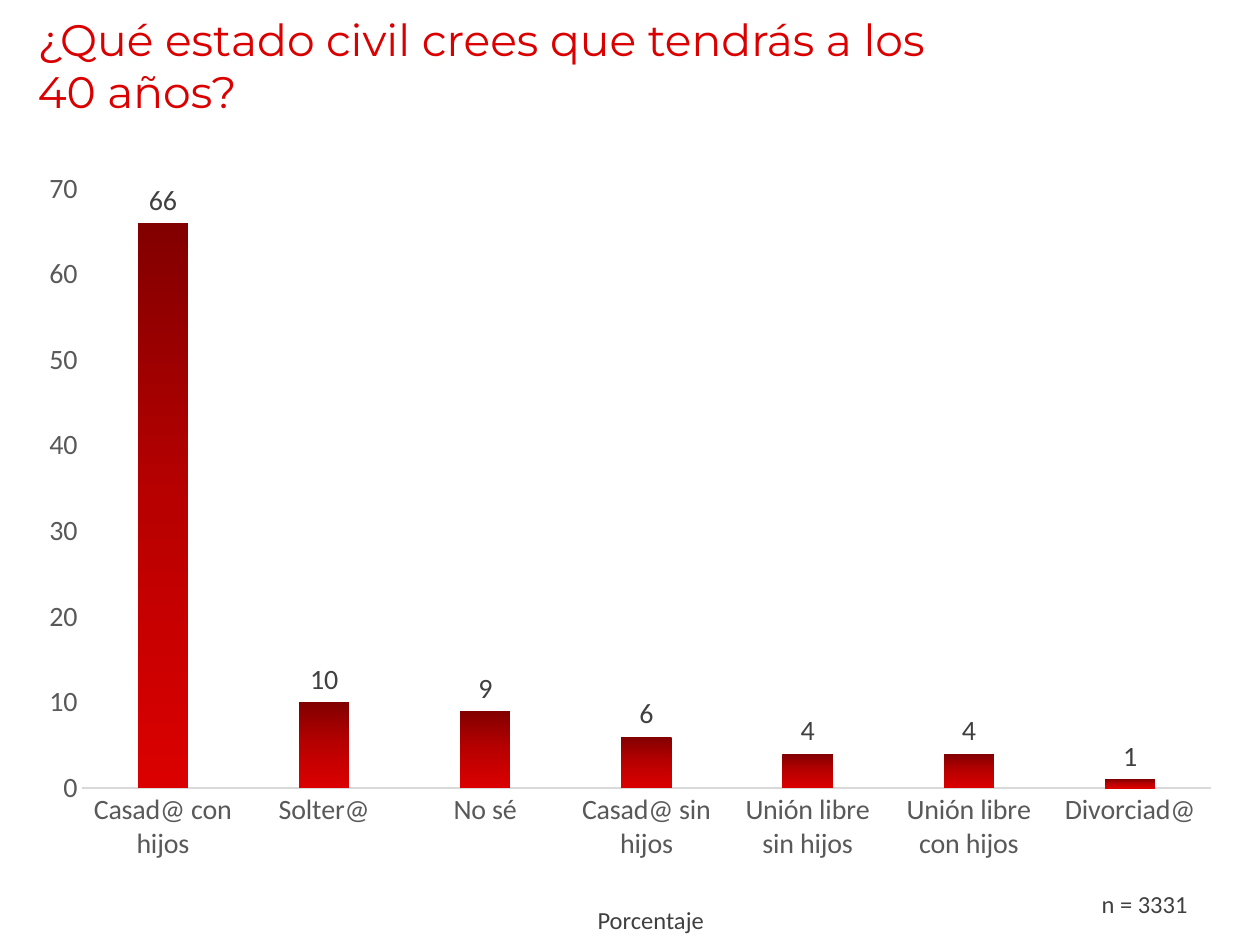
from copy import deepcopy
from dataclasses import dataclass

from pptx import Presentation
from pptx import util as u
from pptx.chart import data
from pptx.dml import color
from pptx.enum import chart as ch
from pptx.enum import text


@dataclass(frozen=True)
class Theme:
    red: str = "DB0000"
    ink: str = "404040"
    axis: str = "595959"
    rule: str = "D9D9D9"
    bar: tuple = ((0, "820000"), (0.5, "B90000"), (1, "DB0000"))
    head: str = "Montserrat"
    body: str = "Calibri"
    big: float = 25.2
    mid: float = 16
    small: float = 14


def rgb(tone):
    return color.RGBColor.from_string(tone)


class Deck:
    """Style and current slide; lengths are cells of a 100 x 75 grid."""

    def __init__(self, theme):
        self.theme = theme
        self.prs = Presentation()
        self.prs.slide_width, self.prs.slide_height = u.Inches(10), u.Inches(7.5)
        self.cell = self.prs.slide_width / 100
        self.slide = self.prs.slides.add_slide(self.prs.slide_layouts[6])

    def area(self, *cells):
        return [round(n * self.cell) for n in cells]

    def style(self, font, size, tone, face=None):
        font.name = face or self.theme.body
        font.size, font.bold = u.Pt(size), False
        font.color.rgb = rgb(tone)

    def label(self, words, at, size, tone, face=None, align=text.PP_ALIGN.CENTER):
        frame = self.slide.shapes.add_textbox(*self.area(*at)).text_frame
        frame.word_wrap = True
        frame.vertical_anchor = text.MSO_ANCHOR.MIDDLE
        frame.text = words
        par = frame.paragraphs[0]
        par.alignment = align
        self.style(par.runs[0].font, size, tone, face)

    def shade(self, fill, stops):
        fill.gradient()
        fill.gradient_angle = 270
        # Add stops beyond the default pair
        first = fill.gradient_stops[0]._gs
        for _ in stops[2:]:
            first.addnext(deepcopy(first))
        for stop, (pos, tone) in zip(fill.gradient_stops, stops):
            stop.position, stop.color.rgb = pos, rgb(tone)

    def columns(self, rows, at):
        t = self.theme
        info = data.CategoryChartData(number_format="###0")
        info.categories = list(rows)
        info.add_series("Porcentaje", rows.values())
        chart = self.slide.shapes.add_chart(
            ch.XL_CHART_TYPE.COLUMN_CLUSTERED, *self.area(*at), info).chart
        chart.has_legend = chart.has_title = False
        self.style(chart.font, t.mid, t.axis)

        # Axes
        cat, val = chart.category_axis, chart.value_axis
        for axis in (cat, val):
            axis.major_tick_mark = axis.minor_tick_mark = ch.XL_TICK_MARK.NONE
            axis.has_major_gridlines = False
            self.style(axis.tick_labels.font, t.mid, t.axis)
        cat.format.line.color.rgb = rgb(t.rule)
        cat.format.line.width = u.Pt(0.75)
        val.format.line.fill.background()
        val.minimum_scale, val.maximum_scale, val.major_unit = 0, 70, 10
        val.tick_labels.number_format = "###0"
        val.tick_labels.number_format_is_linked = False

        # Bars and their values
        plot = chart.plots[0]
        plot.gap_width, plot.overlap = 219, -27
        plot.vary_by_categories = False
        bars = plot.series[0]
        bars.invert_if_negative = False
        self.shade(bars.format.fill, t.bar)
        tags = bars.data_labels
        tags.show_value = True
        tags.number_format, tags.number_format_is_linked = "###0", False
        tags.position = ch.XL_LABEL_POSITION.OUTSIDE_END
        self.style(tags.font, t.mid, t.ink)


def main():
    t = Theme()
    deck = Deck(t)

    # Title
    deck.label("¿Qué estado civil crees que tendrás a los 40 años?",
               (2, 1, 75.7, 8.3), t.big, t.red, t.head, text.PP_ALIGN.LEFT)

    # Share of answers
    deck.columns({
        "Casad@ con hijos": 66,
        "Solter@": 10,
        "No sé": 9,
        "Casad@ sin hijos": 6,
        "Unión libre sin hijos": 4,
        "Unión libre con hijos": 4,
        "Divorciad@": 1,
    }, (2, 12.5, 96, 57))

    # Unit and sample size
    deck.label("Porcentaje", (35.8, 71, 31.7, 4), t.small, t.ink)
    deck.label("n = 3331", (83.7, 69.7, 14.3, 4), t.small, t.ink)

    deck.prs.save("out.pptx")


if __name__ == "__main__":
    main()
